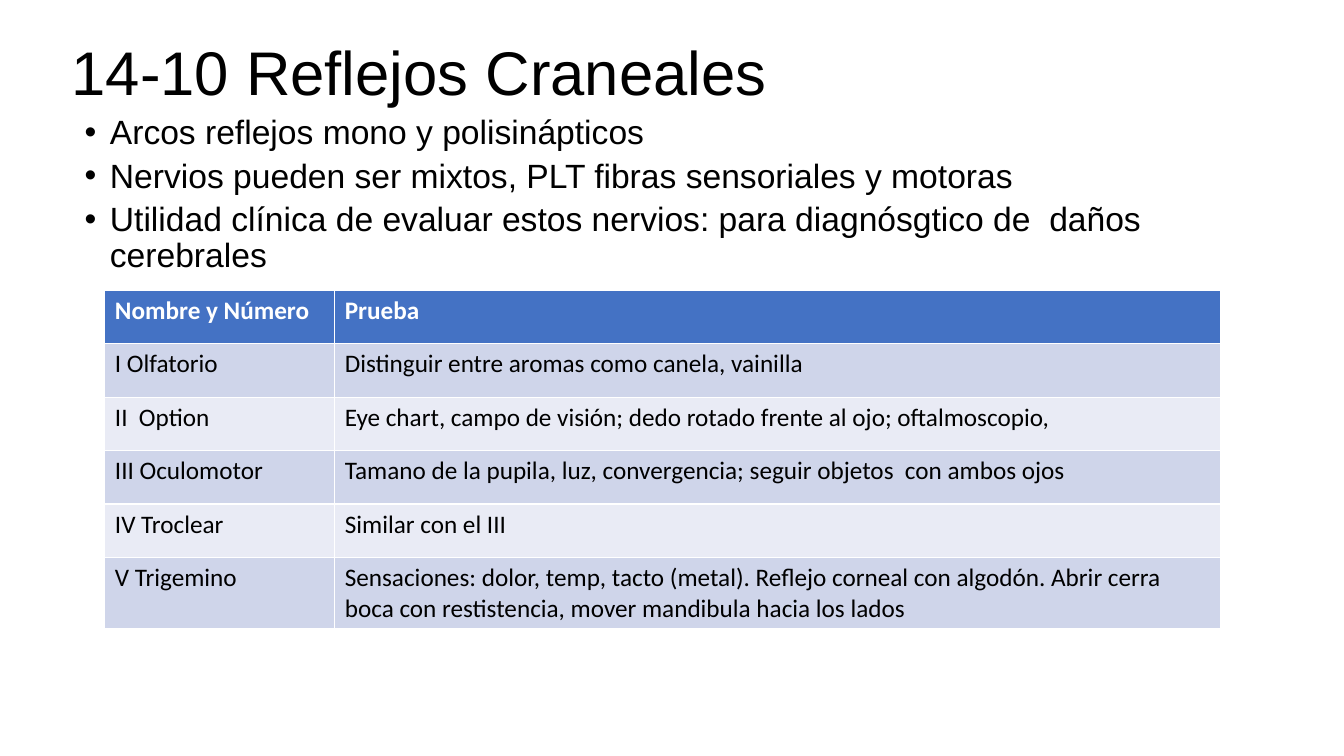
import pptx
import pptx.util
import pptx.dml.color
import pptx.enum.text
import pptx.oxml
import pptx.oxml.ns
from pptx.util import Inches


def add_run(paragraph, text, size, font, color, bold=False):
    run = paragraph.add_run()
    run.text = text
    run.font.size = pptx.util.Pt(size)
    run.font.name = font
    run.font.bold = bold
    run.font.color.rgb = pptx.dml.color.RGBColor.from_string(color)


def place(shape, left, top, width, height):
    shape.left, shape.top = Inches(left), Inches(top)
    shape.width, shape.height = Inches(width), Inches(height)
    shape.text_frame.word_wrap = True
    shape.text_frame.auto_size = pptx.enum.text.MSO_AUTO_SIZE.NONE


presentation = pptx.Presentation()
presentation.slide_width = Inches(13.33)
presentation.slide_height = Inches(7.5)
slide = presentation.slides.add_slide(presentation.slide_layouts[1])

# Title
title = slide.shapes.title
place(title, 0.61, 0.02, 11.5, 1.45)
title.text_frame.vertical_anchor = pptx.enum.text.MSO_ANCHOR.MIDDLE
heading = title.text_frame.paragraphs[0]
heading.alignment = pptx.enum.text.PP_ALIGN.LEFT
heading.line_spacing = 0.9
add_run(heading, "14-10 Reflejos Craneales", 44, "Arial", "000000")

# Key points
points = [
    "Arcos reflejos mono y polisinápticos",
    "Nervios pueden ser mixtos, PLT fibras sensoriales y motoras",
    "Utilidad clínica de evaluar estos nervios: para diagnósgtico de  daños cerebrales",
]
body = slide.placeholders[1]
place(body, 0.24, 1.1, 11.5, 1.72)
for index, point in enumerate(points):
    frame = body.text_frame
    paragraph = frame.add_paragraph() if index else frame.paragraphs[0]
    paragraph.level = 1
    paragraph.line_spacing = 0.9
    paragraph.space_before = pptx.util.Pt(5)
    properties = paragraph._p.get_or_add_pPr()
    properties.set("marL", str(Inches(0.75)))
    properties.set("indent", str(Inches(-0.25)))
    namespace = pptx.oxml.ns.nsdecls("a")
    properties.append(pptx.oxml.parse_xml(f'<a:buFont {namespace} typeface="Arial"/>'))
    properties.append(pptx.oxml.parse_xml(f'<a:buChar {namespace} char="•"/>'))
    add_run(paragraph, point, 24, "Arial", "000000")

# Cranial nerves and their tests; the table style draws the white borders
nerve_tests = [
    ("Nombre y Número", "Prueba"),
    ("I Olfatorio", "Distinguir entre aromas como canela, vainilla"),
    ("II  Option", "Eye chart, campo de visión; dedo rotado frente al ojo; oftalmoscopio,"),
    ("III Oculomotor", "Tamano de la pupila, luz, convergencia; seguir objetos  con ambos ojos"),
    ("IV Troclear", "Similar con el III"),
    ("V Trigemino", "Sensaciones: dolor, temp, tacto (metal). Reflejo corneal con algodón. "
     "Abrir cerra boca con restistencia, mover mandibula hacia los lados"),
]
row_height = 0.53
nerve_table = slide.shapes.add_table(
    len(nerve_tests), 2, Inches(1.04), Inches(2.88),
    Inches(11.07), Inches(row_height * len(nerve_tests))).table
for column, width in zip(nerve_table.columns, (2.28, 8.79)):
    column.width = Inches(width)

for row, texts in enumerate(nerve_tests):
    nerve_table.rows[row].height = Inches(row_height)
    is_header = row == 0
    fill = "4472C4" if is_header else ("E9EBF5", "CFD5EA")[row % 2]
    for column, text in enumerate(texts):
        cell = nerve_table.cell(row, column)
        cell.fill.solid()
        cell.fill.fore_color.rgb = pptx.dml.color.RGBColor.from_string(fill)
        add_run(cell.text_frame.paragraphs[0], text, 18, "Calibri",
                "FFFFFF" if is_header else "000000", is_header)

presentation.save("out.pptx")
